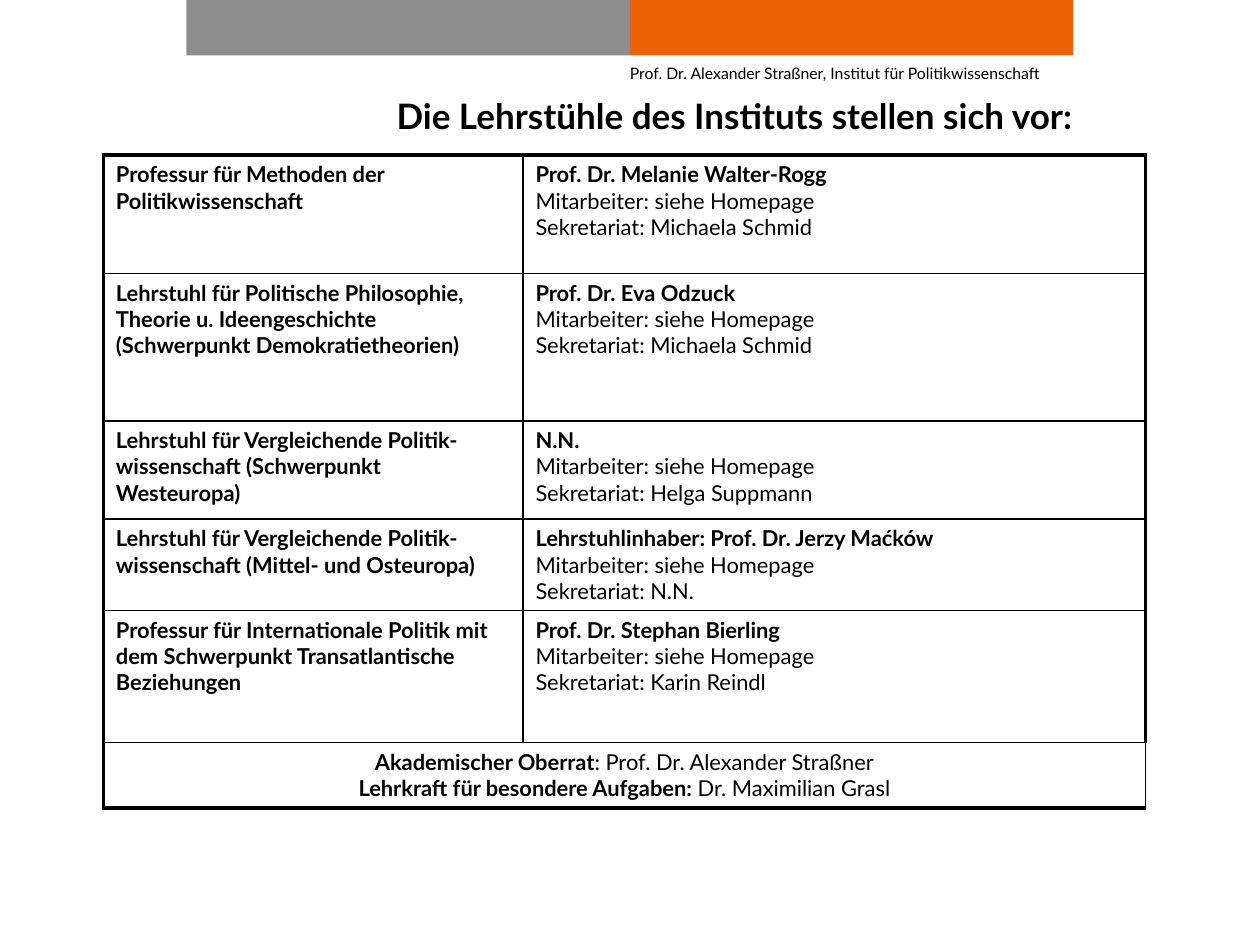
import pptx
import pptx.util
import pptx.dml.color
import pptx.enum.shapes
import pptx.enum.text
from lxml import etree
from pptx.util import Inches

COLORS = {"gray": "8E8E8E", "orange": "EC6200", "black": "000000"}
FONT = "Lato"
ALIGN = pptx.enum.text.PP_ALIGN
DRAWING = "{http://schemas.openxmlformats.org/drawingml/2006/main}"

COLUMN_WIDTHS = [3.33, 4.94]
ROW_HEIGHTS = [0.94, 1.17, 0.78, 0.72, 1.05, 0.5]
OUTER, INNER = 2.25, 1  # border widths in points

# Chair, holder, secretary
CHAIRS = [
    ("Professur für Methoden der Politikwissenschaft",
     "Prof. Dr. Melanie Walter-Rogg", "Michaela Schmid"),
    ("Lehrstuhl für Politische Philosophie, Theorie u. Ideengeschichte "
     "(Schwerpunkt Demokratietheorien)",
     "Prof. Dr. Eva Odzuck", "Michaela Schmid"),
    ("Lehrstuhl für Vergleichende Politik-wissenschaft (Schwerpunkt Westeuropa)",
     "N.N.", "Helga Suppmann"),
    ("Lehrstuhl für Vergleichende Politik-wissenschaft (Mittel- und Osteuropa)",
     "Lehrstuhlinhaber: Prof. Dr. Jerzy Maćków", "N.N."),
    ("Professur für Internationale Politik mit dem Schwerpunkt "
     "Transatlantische Beziehungen",
     "Prof. Dr. Stephan Bierling", "Karin Reindl"),
]
OTHER_STAFF = [
    [("Akademischer Oberrat", True), (": Prof. Dr. Alexander Straßner", False)],
    [("Lehrkraft für besondere Aufgaben:", True), (" Dr. Maximilian Grasl", False)],
]


def rgb(name):
    return pptx.dml.color.RGBColor.from_string(COLORS[name])


def write_text(frame, paragraphs, size, alignment=ALIGN.LEFT):
    """Fill a text frame; each paragraph is a list of (text, bold) runs."""
    frame.word_wrap = True
    for index, runs in enumerate(paragraphs):
        paragraph = frame.add_paragraph() if index else frame.paragraphs[0]
        paragraph.alignment = alignment
        for text, bold in runs:
            run = paragraph.add_run()
            run.text = text
            run.font.name = FONT
            run.font.size = pptx.util.Pt(size)
            run.font.bold = bold
            run.font.color.rgb = rgb("black")


def add_bar(slide, left, color):
    bar = slide.shapes.add_shape(
        pptx.enum.shapes.MSO_SHAPE.RECTANGLE,
        Inches(left), Inches(0), Inches(3.52), Inches(0.44))
    bar.shadow.inherit = False
    bar.fill.solid()
    bar.fill.fore_color.rgb = rgb(color)
    bar.line.fill.background()


def add_text(slide, left, top, width, height, text, size, bold, alignment):
    box = slide.shapes.add_textbox(
        Inches(left), Inches(top), Inches(width), Inches(height))
    write_text(box.text_frame, [[(text, bold)]], size, alignment)
    return box.text_frame


def set_borders(cell, widths):
    """Draw the cell sides; widths are points for left, right, top, bottom."""
    properties = cell._tc.get_or_add_tcPr()
    for side, width in zip("LRTB", widths):
        line = etree.SubElement(properties, f"{DRAWING}ln{side}",
                                w=str(pptx.util.Pt(width)))
        fill = etree.SubElement(line, f"{DRAWING}solidFill")
        etree.SubElement(fill, f"{DRAWING}srgbClr", val=COLORS["black"])


def add_chair_table(slide):
    rows, columns = len(ROW_HEIGHTS), len(COLUMN_WIDTHS)
    table = slide.shapes.add_table(
        rows, columns, Inches(0.82), Inches(1.23),
        Inches(sum(COLUMN_WIDTHS)), Inches(sum(ROW_HEIGHTS))).table
    table.first_row = table.horz_banding = False
    for column, width in zip(table.columns, COLUMN_WIDTHS):
        column.width = Inches(width)
    for row, height in zip(table.rows, ROW_HEIGHTS):
        row.height = Inches(height)

    # Heavy frame outside, thin rules inside
    for row in range(rows):
        for column in range(columns):
            edges = (column == 0, column == columns - 1,
                     row == 0, row == rows - 1)
            cell = table.cell(row, column)
            set_borders(cell, [OUTER if edge else INNER for edge in edges])
            cell.fill.background()

    # Chairs
    for row, (chair, holder, secretary) in enumerate(CHAIRS):
        write_text(table.cell(row, 0).text_frame, [[(chair, True)]], 12.5)
        write_text(table.cell(row, 1).text_frame, [
            [(holder, True)],
            [("Mitarbeiter: siehe Homepage", False)],
            [(f"Sekretariat: {secretary}", False)],
        ], 12.5)

    # Other staff across the full width
    last = table.cell(rows - 1, 0)
    last.merge(table.cell(rows - 1, columns - 1))
    write_text(last.text_frame, OTHER_STAFF, 12.5, ALIGN.CENTER)


def main():
    presentation = pptx.Presentation()
    presentation.slide_width = Inches(10)
    presentation.slide_height = Inches(7.5)
    slide = presentation.slides.add_slide(presentation.slide_layouts[6])

    # Header bars
    add_bar(slide, 1.48, "gray")
    add_bar(slide, 5, "orange")

    # Title and table
    add_text(slide, 2.56, 0.7, 6.54, 0.43,
             "Die Lehrstühle des Instituts stellen sich vor:",
             20, True, ALIGN.CENTER)
    add_chair_table(slide)

    # Author line
    author = add_text(
        slide, 5, 0.52, 3.53, 0.39,
        "Prof. Dr. Alexander Straßner, Institut für Politikwissenschaft",
        9, False, ALIGN.LEFT)
    author.margin_left = author.margin_right = 0
    author.margin_top = author.margin_bottom = 0
    author.paragraphs[0].line_spacing = pptx.util.Pt(10)

    presentation.save("out.pptx")


if __name__ == "__main__":
    main()
